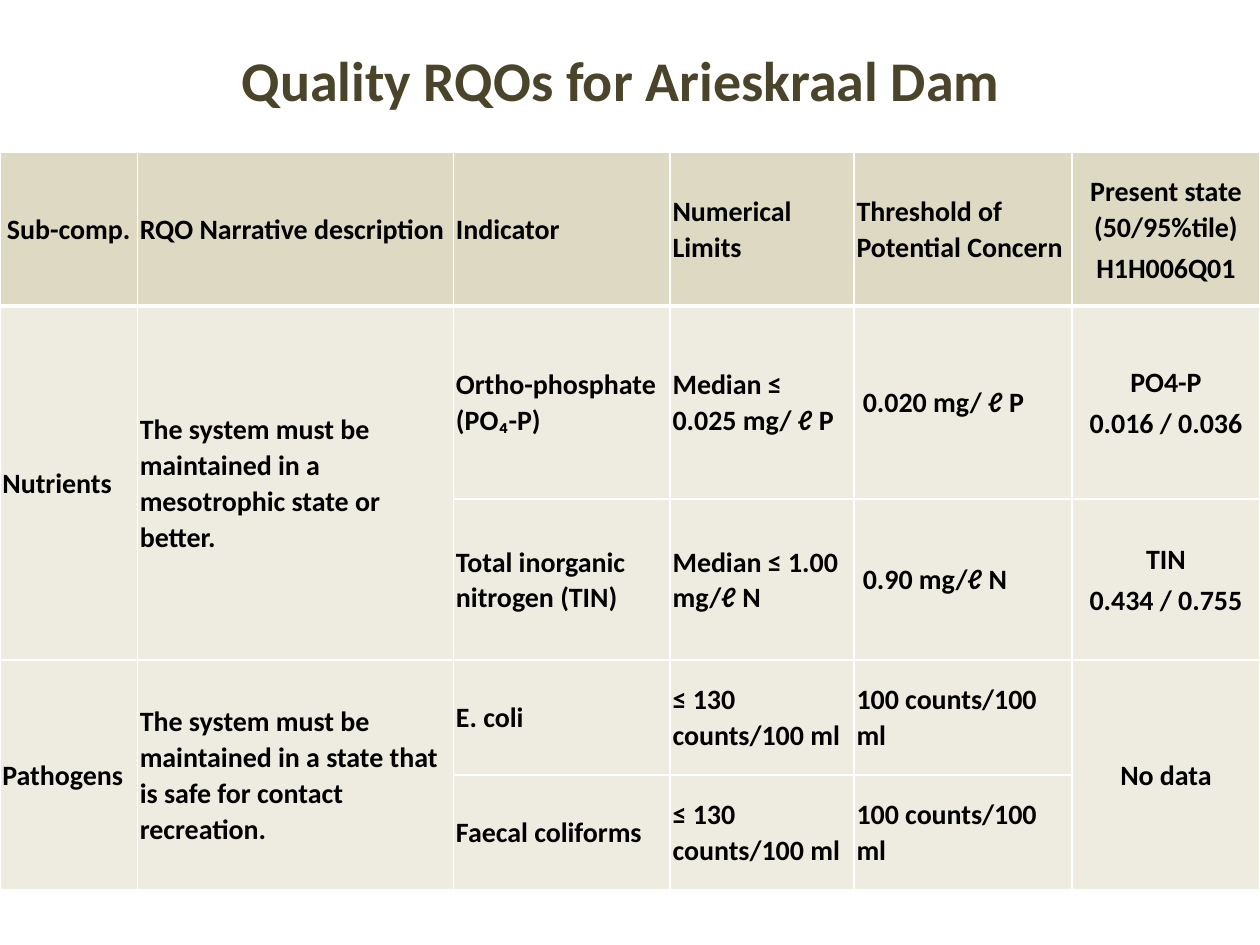
from lxml import etree
from pptx import Presentation
from pptx.dml.color import RGBColor
from pptx.enum import text
from pptx.oxml import ns
from pptx.util import Pt

OLIVE = RGBColor(0x4A, 0x45, 0x2A)
TAN = RGBColor(0xDD, 0xD9, 0xC3)
CREAM = RGBColor(0xEE, 0xEC, 0xE1)
BLACK = RGBColor(0, 0, 0)
WHITE = RGBColor(0xFF, 0xFF, 0xFF)


def style(run, size, color):
    run.font.name = "Calibri"
    run.font.size = Pt(size)
    run.font.bold = True
    run.font.color.rgb = color


def edge(cell, sides):
    props = cell._tc.get_or_add_tcPr()
    for spot, (side, width) in enumerate(sides):
        line = etree.Element(ns.qn(f"a:ln{side}"), w=str(Pt(width)))
        fill = etree.SubElement(line, ns.qn("a:solidFill"))
        etree.SubElement(fill, ns.qn("a:srgbClr"), val=str(WHITE))
        props.insert(spot, line)


deck = Presentation()
deck.slide_width, deck.slide_height = Pt(720), Pt(540)
slide = deck.slides.add_slide(deck.slide_layouts[6])

title = slide.shapes.add_textbox(Pt(131), Pt(22.3), Pt(553), Pt(46))
frame = title.text_frame
frame.word_wrap = True
frame.vertical_anchor = text.MSO_ANCHOR.MIDDLE
frame.text = "Quality RQOs for Arieskraal Dam"
style(frame.paragraphs[0].runs[0], 32, OLIVE)

rows = [
    ["Sub-comp.", "RQO Narrative description", "Indicator", "Numerical Limits",
     "Threshold of Potential Concern", "Present state (50/95%tile)\nH1H006Q01"],
    ["Nutrients", "The system must be maintained in a mesotrophic state or better.",
     "Ortho-phosphate (PO₄-P)", "Median ≤ 0.025 mg/ ℓ P", "0.020 mg/ ℓ P",
     "PO4-P\n0.016 / 0.036"],
    ["", "", "Total inorganic nitrogen (TIN)", "Median ≤ 1.00 mg/ℓ N",
     "0.90 mg/ℓ N", "TIN\n0.434 / 0.755"],
    ["Pathogens",
     "The system must be maintained in a state that is safe for contact recreation.",
     "E. coli", "≤ 130 counts/100 ml", "100 counts/100 ml", "No data"],
    ["", "", "Faecal coliforms", "≤ 130 counts/100 ml", "100 counts/100 ml", ""],
]
widths = [78.5, 180.7, 123.8, 105.1, 124.6, 107.3]
heights = [87.8, 110.2, 92.2, 65.5, 65.5]
centred = {(0, 0)} | {(r, 5) for r in range(5)}
inset = {(1, 4), (2, 4)}

table = slide.shapes.add_table(
    5, 6, Pt(0), Pt(87.1), Pt(sum(widths)), Pt(sum(heights))).table
for col, width in zip(table.columns, widths):
    col.width = Pt(width)
for row, height in zip(table.rows, heights):
    row.height = Pt(height)

for r, words in enumerate(rows):
    for c, word in enumerate(words):
        cell = table.cell(r, c)
        cell.text = word
        cell.vertical_anchor = text.MSO_ANCHOR.MIDDLE
        cell.margin_left = Pt(5 if (r, c) in inset else 1.4)
        cell.margin_right = Pt(1.4)
        cell.margin_top = cell.margin_bottom = 0
        cell.fill.solid()
        cell.fill.fore_color.rgb = CREAM if r else TAN
        edge(cell, [("L", 1), ("R", 1), ("T", 3 if r == 1 else 1),
                    ("B", 1 if r else 3)])
        for n, para in enumerate(cell.text_frame.paragraphs):
            para.line_spacing = 1.05
            if n:
                para.space_before = Pt(3)
            if (r, c) in centred:
                para.alignment = text.PP_ALIGN.CENTER
            for run in para.runs:
                style(run, 16, BLACK)

for r, c in [(1, 0), (1, 1), (3, 0), (3, 1), (3, 5)]:
    table.cell(r, c).merge(table.cell(r + 1, c))

deck.save("out.pptx")
